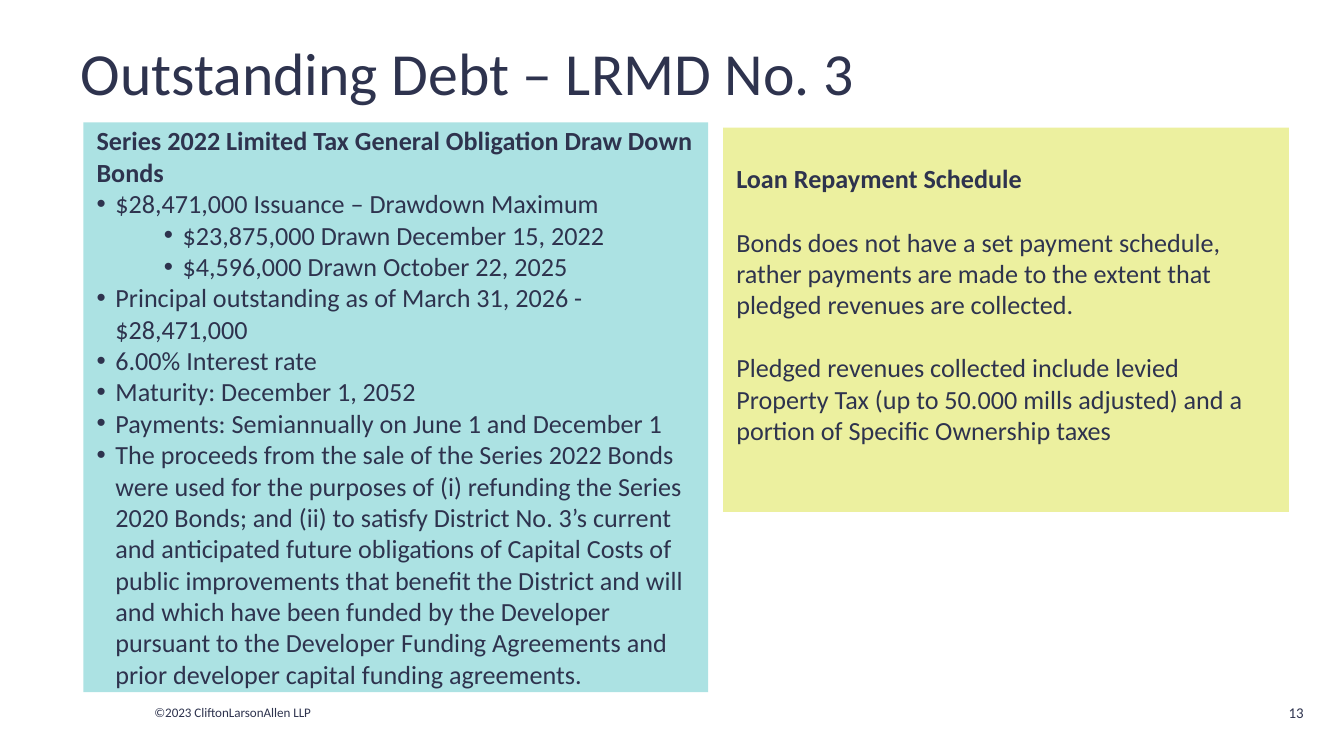
from lxml.etree import SubElement
from pptx import Presentation
from pptx.dml.color import RGBColor
from pptx.enum.shapes import MSO_SHAPE
from pptx.enum.text import MSO_ANCHOR, PP_ALIGN
from pptx.oxml.ns import qn
from pptx.util import Inches, Pt

WIDTH = Inches(10)
HEIGHT = WIDTH * 9 // 16
COLUMN, ROW = WIDTH / 100, HEIGHT / 100
INK, TEAL, LIME = "2E334E", "7DD2D3", "E2E868"
BULLET_HANG = 0.14
LEVEL_STEP = 0.5

BOND_FACTS = [
    (0, "$28,471,000 Issuance – Drawdown Maximum"),
    (1, "$23,875,000 Drawn December 15, 2022"),
    (1, "$4,596,000 Drawn October 22, 2025"),
    (0, "Principal outstanding as of March 31, 2026 - $28,471,000"),
    (0, "6.00% Interest rate"),
    (0, "Maturity: December 1, 2052"),
    (0, "Payments: Semiannually on June 1 and December 1"),
    (0, "The proceeds from the sale of the Series 2022 Bonds were used for the "
        "purposes of (i) refunding the Series 2020 Bonds; and (ii) to satisfy "
        "District No. 3’s current and anticipated future obligations of Capital "
        "Costs of public improvements that benefit the District and will and "
        "which have been funded by the Developer pursuant to the Developer "
        "Funding Agreements and prior developer capital funding agreements."),
]
REPAYMENT_NOTES = [
    "Bonds does not have a set payment schedule, rather payments are made to the "
    "extent that pledged revenues are collected.",
    "Pledged revenues collected include levied Property Tax (up to 50.000 mills "
    "adjusted) and a portion of Specific Ownership taxes",
]


def color(value):
    return RGBColor.from_string(value)


def grid(box):
    left, top, width, height = box
    return [round(length) for length in
            (left * COLUMN, top * ROW, width * COLUMN, height * ROW)]


def apply(target, values):
    for name, value in values.items():
        setattr(target, name, value)


def write(paragraph, text, size, bold=False, align=PP_ALIGN.LEFT):
    run = paragraph.add_run()
    run.text = text
    paragraph.alignment = align
    apply(run.font, {"name": "Calibri", "size": Pt(size), "bold": bold})
    run.font.color.rgb = color(INK)


def add_bullet(paragraph, level):
    paragraph.level = level
    properties = paragraph._p.get_or_add_pPr()
    properties.set("marL", str(Inches(BULLET_HANG + level * LEVEL_STEP)))
    properties.set("indent", str(-Inches(BULLET_HANG)))
    SubElement(properties, qn("a:buFont"), typeface="Arial")
    SubElement(properties, qn("a:buChar"), char="•")


def place_title(slide, box, text):
    title = slide.shapes.title
    apply(title, dict(zip(("left", "top", "width", "height"), grid(box))))
    apply(title.text_frame, {"word_wrap": True, "vertical_anchor": MSO_ANCHOR.MIDDLE})
    write(title.text_frame.paragraphs[0], text, 32)


def add_panel(slide, box, fill, heading):
    panel = slide.shapes.add_shape(MSO_SHAPE.RECTANGLE, *grid(box))
    panel.shadow.inherit = False
    panel.fill.solid()
    panel.fill.fore_color.rgb = color(fill)
    solid = panel._element.spPr.find(qn("a:solidFill"))
    SubElement(solid[0], qn("a:alpha"), val="63000")
    panel.line.fill.background()
    frame = panel.text_frame
    apply(frame, {"word_wrap": True, "vertical_anchor": MSO_ANCHOR.MIDDLE})
    write(frame.paragraphs[0], heading, 14, bold=True)
    return frame


def add_bond_panel(slide, box):
    frame = add_panel(slide, box, TEAL,
                      "Series 2022 Limited Tax General Obligation Draw Down Bonds")
    for level, fact in BOND_FACTS:
        paragraph = frame.add_paragraph()
        add_bullet(paragraph, level)
        write(paragraph, fact, 14)


def add_repayment_panel(slide, box):
    frame = add_panel(slide, box, LIME, "Loan Repayment Schedule")
    frame.margin_bottom = Inches(0.28)
    for note in REPAYMENT_NOTES:
        paragraph = frame.add_paragraph()
        paragraph.space_before = Pt(17)
        write(paragraph, note, 14)


def add_footer_text(slide, box, text, size, align):
    frame = slide.shapes.add_textbox(*grid(box)).text_frame
    apply(frame, {"word_wrap": True, "vertical_anchor": MSO_ANCHOR.MIDDLE})
    write(frame.paragraphs[0], text, size, align=align)


def main():
    presentation = Presentation()
    apply(presentation, {"slide_width": WIDTH, "slide_height": HEIGHT})
    slide = presentation.slides.add_slide(presentation.slide_layouts[5])
    add_footer_text(slide, (10.5, 92.2, 15.1, 3.91),
                    "©2023 CliftonLarsonAllen LLP", 7, PP_ALIGN.LEFT)
    place_title(slide, (5, 2.84, 90, 13.33), "Outstanding Debt – LRMD No. 3")
    add_footer_text(slide, (93.7, 90.84, 4.3, 6.76), "13", 8, PP_ALIGN.RIGHT)
    add_bond_panel(slide, (6.2, 16.18, 46.5, 75.38))
    add_repayment_panel(slide, (53.8, 16.89, 42.1, 50.84))
    presentation.save("out.pptx")


if __name__ == "__main__":
    main()
